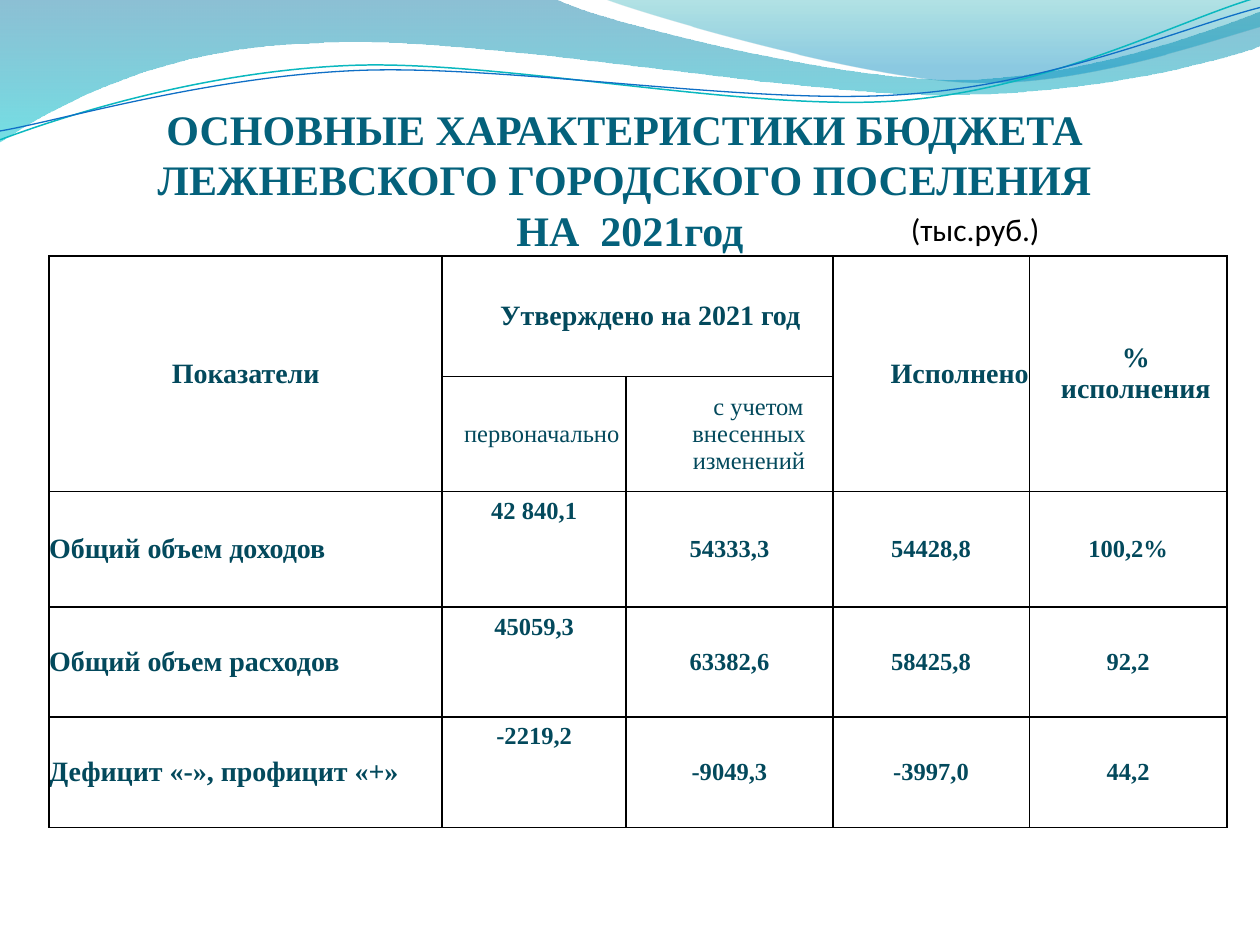
from math import cos, radians, sin

from lxml import etree
from pptx import Presentation
from pptx.dml.color import RGBColor
from pptx.enum.text import MSO_ANCHOR, MSO_AUTO_SIZE, PP_ALIGN
from pptx.oxml import parse_xml
from pptx.oxml.ns import nsdecls, qn
from pptx.util import Inches, Pt

SERIF = "Times New Roman"
TITLE_COLOR = "04617B"
TABLE_COLOR = "03495C"
TILT = 357.3

WAVE = [[(0, 0)], [(4.4, -0.01)],
        [(4.76, 0.17), (6.64, 0.63), (7.58, 0.63)], [(8.53, 0.63), (9.58, 0.26), (10, 0.09)],
        [(10.01, 0.36)],
        [(9.83, 0.44), (8.7, 0.76), (7.46, 0.75)], [(6.22, 0.75), (3.82, 0.28), (2.57, 0.34)],
        [(1.29, 0.36), (0.46, 0.83), (-0.01, 1.13)], [(0, 0)]]
CORNER = [[(4.79, -0.01)], [(5.09, 0.11), (6.82, 0.62), (7.69, 0.65)],
          [(8.56, 0.69), (9.61, 0.32), (10, 0.21)], [(10, 0)], [(4.79, -0.01)]]
TEAL_LINE = [[(0, 1.11)], [(0.48, 0.93), (1.58, 0.57), (2.77, 0.52)],
             [(3.95, 0.47), (5.93, 0.89), (7.13, 0.8)], [(8.33, 0.71), (9.38, 0.15), (9.98, -0.02)]]
BLUE_LINE = [[(0, 1.04)], [(0.47, 0.96), (1.64, 0.61), (2.83, 0.56)],
             [(4.03, 0.51), (5.97, 0.84), (7.17, 0.75)], [(8.36, 0.67), (9.41, 0.21), (10, 0.06)]]

COLS = [3.12, 1.46, 1.64, 1.56, 1.57]
ROWS = [0.96, 0.91, 0.92, 0.87, 0.88]
DATA = [
    ("Общий объем доходов", "42 840,1", "54333,3", "54428,8", "100,2%"),
    ("Общий объем расходов", "45059,3", "63382,6", "58425,8", "92,2"),
    ("Дефицит «-», профицит «+»", "-2219,2", "-9049,3", "-3997,0", "44,2"),
]


def rgb(color):
    return RGBColor.from_string(color)


def add_run(p, text, size, font, color, bold=False):
    r = p.add_run()
    r.text = text
    r.font.size = Pt(size)
    r.font.name = font
    r.font.bold = bold
    r.font.color.rgb = rgb(color)


def add_curve(s, segments, close):
    ends = [(Inches(x), Inches(y)) for x, y in (seg[-1] for seg in segments)]
    fb = s.shapes.build_freeform(*ends[0])
    fb.add_line_segments(ends[1:], close=close)
    sp = fb.convert_to_shape()
    sp.shadow.inherit = False
    lines = list(sp._element.iter(qn("a:lnTo")))
    for line, seg in zip(lines, segments[1:]):
        if len(seg) == 3:
            line.tag = qn("a:cubicBezTo")
            line.clear()
            for x, y in seg:
                etree.SubElement(line, qn("a:pt"), x=str(Inches(x) - sp.left),
                                 y=str(Inches(y) - sp.top))
    return sp


def add_gradient_wave(s, segments, stops):
    sp = add_curve(s, segments, True)
    sp.line.fill.background()
    sp.fill.gradient()
    sp.fill.gradient_angle = 270
    gs_lst = sp._element.spPr.find(qn("a:gradFill")).find(qn("a:gsLst"))
    for gs in list(gs_lst):
        gs_lst.remove(gs)
    for pos, color, opacity in stops:
        gs_lst.append(parse_xml(
            f'<a:gs {nsdecls("a")} pos="{pos * 1000}"><a:srgbClr val="{color}">'
            f'<a:alpha val="{opacity * 1000}"/></a:srgbClr></a:gs>'))


def turn(point, center, degrees):
    a = radians(degrees)
    dx, dy = point[0] - center[0], point[1] - center[1]
    return (center[0] + dx * cos(a) - dy * sin(a), center[1] + dx * sin(a) + dy * cos(a))


def add_wave_line(s, segments, center, color, width):
    level = [[turn(pt, center, -TILT) for pt in seg] for seg in segments]
    sp = add_curve(s, level, False)
    sp.rotation = TILT
    sp.fill.background()
    sp.line.color.rgb = rgb(color)
    sp.line.width = Pt(width)


def add_waves(s):
    add_gradient_wave(s, WAVE, [(0, "0074A1", 45), (100, "00C6CF", 55)])
    add_gradient_wave(s, CORNER, [(0, "00A1A9", 30), (80, "008BBF", 45), (100, "008BBF", 45)])
    add_wave_line(s, TEAL_LINE, (4.99, 0.57), "0AB8BF", 0.85)
    add_wave_line(s, BLUE_LINE, (5, 0.59), "0F6FC6", 0.75)


def add_title(s, x, y, w, h):
    tf = s.shapes.add_textbox(Inches(x), Inches(y), Inches(w), Inches(h)).text_frame
    tf.word_wrap = True
    tf.vertical_anchor = MSO_ANCHOR.BOTTOM
    tf.margin_left = tf.margin_right = tf.margin_bottom = 0
    p = tf.paragraphs[0]
    p.alignment = PP_ALIGN.CENTER
    lines = ["ОСНОВНЫЕ ХАРАКТЕРИСТИКИ БЮДЖЕТА ",
             "ЛЕЖНЕВСКОГО ГОРОДСКОГО ПОСЕЛЕНИЯ ", "НА  2021год"]
    for i, line in enumerate(lines):
        if i:
            p.add_line_break()
        add_run(p, line, 24, SERIF, TITLE_COLOR, True)


def add_unit(s, x, y, w, h):
    tf = s.shapes.add_textbox(Inches(x), Inches(y), Inches(w), Inches(h)).text_frame
    tf.word_wrap = True
    tf.auto_size = MSO_AUTO_SIZE.SHAPE_TO_FIT_TEXT
    add_run(tf.paragraphs[0], "(тыс.руб.)", 18, "Calibri", "000000")


def style_cell(cell):
    tcPr = cell._tc.get_or_add_tcPr()
    for side in ("lnL", "lnR", "lnT", "lnB"):
        ln = etree.SubElement(tcPr, qn(f"a:{side}"), w=str(Pt(1)))
        fill = etree.SubElement(ln, qn("a:solidFill"))
        etree.SubElement(fill, qn("a:srgbClr"), val="000000")
    cell.fill.background()


def write_cell(cell, text, size, bold=True, align=PP_ALIGN.CENTER, left=0, first=0,
               after=0, top=False):
    if not top:
        cell.vertical_anchor = MSO_ANCHOR.MIDDLE
        cell.margin_left = cell.margin_right = cell.margin_top = cell.margin_bottom = 0
    p = cell.text_frame.paragraphs[0]
    p.alignment = align
    if after:
        p.space_after = Pt(after)
    if left:
        pPr = p._p.get_or_add_pPr()
        pPr.set("marL", str(Inches(left)))
        pPr.set("indent", str(Inches(first)))
    add_run(p, text, size, SERIF, TABLE_COLOR, bold)


def add_budget_table(s, x, y):
    table = s.shapes.add_table(len(ROWS), len(COLS), Inches(x), Inches(y),
                               Inches(sum(COLS)), Inches(sum(ROWS))).table
    table.first_row = table.horz_banding = False
    for col, width in zip(table.columns, COLS):
        col.width = Inches(width)
    for row, height in zip(table.rows, ROWS):
        row.height = Inches(height)
    for cell in table.iter_cells():
        style_cell(cell)
    for c in (0, 3, 4):
        table.cell(0, c).merge(table.cell(1, c))
    table.cell(0, 1).merge(table.cell(0, 2))

    write_cell(table.cell(0, 0), "Показатели", 16)
    write_cell(table.cell(0, 1), "Утверждено на 2021 год", 16, align=PP_ALIGN.LEFT, left=0.46)
    write_cell(table.cell(0, 3), "Исполнено", 16, align=PP_ALIGN.LEFT, left=0.46)
    write_cell(table.cell(0, 4), "% исполнения", 16, left=0.12, after=10.5)
    write_cell(table.cell(1, 1), "первоначально", 14, False, left=0.12)
    write_cell(table.cell(1, 2), "с учетом внесенных изменений", 14, False,
               left=0.31, first=0.15)
    for i, (label, *values) in enumerate(DATA, 2):
        write_cell(table.cell(i, 0), label, 16, align=PP_ALIGN.LEFT)
        for j, value in enumerate(values, 1):
            write_cell(table.cell(i, j), value, 14, top=j == 1)


def main():
    prs = Presentation()
    prs.slide_width, prs.slide_height = Inches(10), Inches(7.5)
    s = prs.slides.add_slide(prs.slide_layouts[6])
    add_waves(s)
    add_title(s, 0.5, 0.77, 9, 1.25)
    add_unit(s, 7.13, 1.62, 1.81, 0.4)
    add_budget_table(s, 0.39, 2.03)
    prs.save("out.pptx")


if __name__ == "__main__":
    main()
